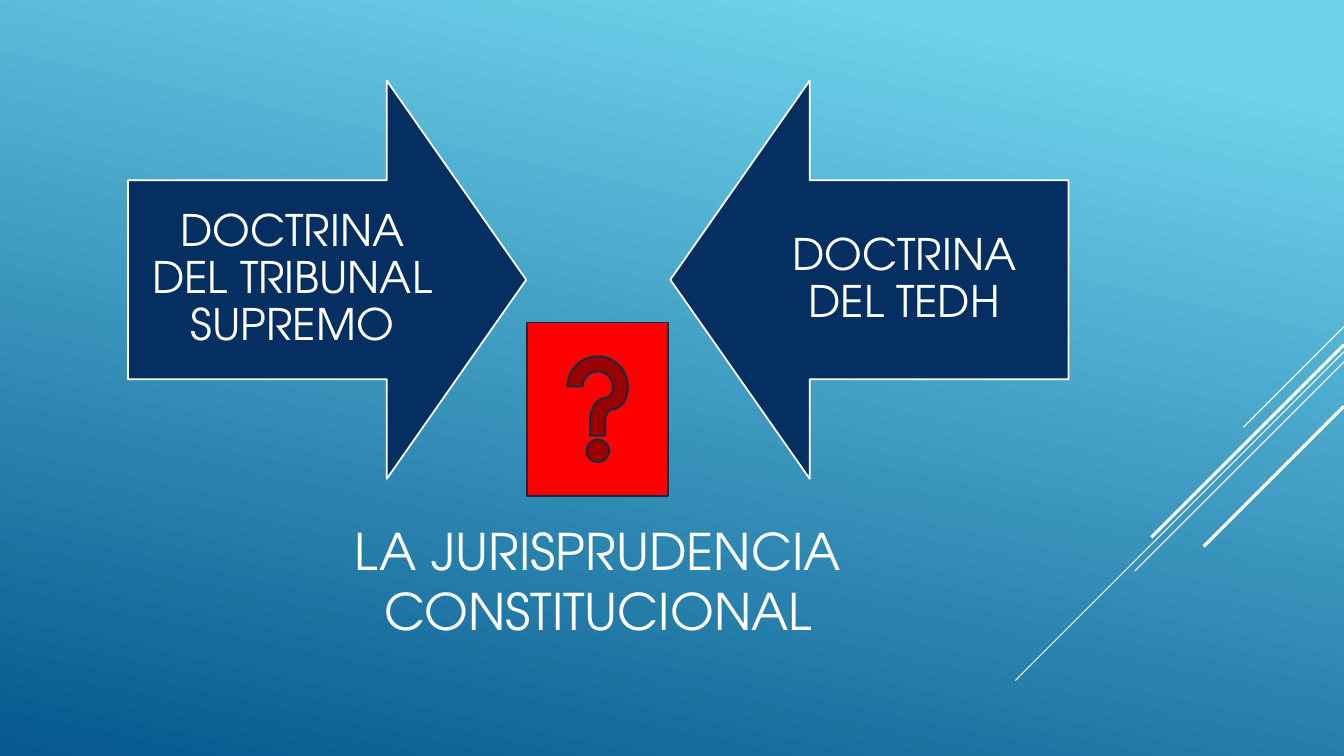
from dataclasses import dataclass
from typing import Any

import lxml.etree
import pptx
import pptx.dml.color
import pptx.enum.shapes
import pptx.enum.text
import pptx.oxml.ns
import pptx.util

SHAPES = pptx.enum.shapes.MSO_SHAPE
COLUMNS, ROWS = 160, 90
CELL = pptx.util.Inches(1 / 12)


@dataclass(frozen=True)
class Theme:
    font: str = "TeX Gyre Adventor"
    white: str = "FFFFFF"
    navy: str = "052F61"
    red: str = "FF0000"
    button_edge: str = "043148"
    sky: str = "6ED2EB"
    deep_blue: str = "06588E"
    title_size: float = 36
    doctrine_size: float = 31
    outline: float = 1.25
    thin_ray: float = 0.75
    thick_ray: float = 2.25


@dataclass(frozen=True)
class Box:
    left: float
    top: float
    width: float
    height: float

    def lengths(self) -> list[int]:
        return [cells(n) for n in (self.left, self.top, self.width, self.height)]


@dataclass(frozen=True)
class Ray:
    """A diagonal from the right edge: its starting row and its run in cells."""
    row: float
    run: float
    weight: float


@dataclass(frozen=True)
class Doctrine:
    text: str
    arrow_left: float
    text_left: float
    rotation: float


THEME = Theme()

LEFT, RIGHT = 15.24, 127.2
ARROW_TOP, ARROW_SIDE = 9.6, 47.4
SHAFT_SHARE, HEAD_SHARE = 0.5, 0.35
TEXT_WIDTH = ARROW_SIDE * (1 - HEAD_SHARE / 2)
TEXT_HEIGHT = ARROW_SIDE * SHAFT_SHARE
TEXT_INSET = 2.88

RAYS = [
    Ray(38.88, 12, THEME.thin_ray),
    Ray(41.88, 39.12, THEME.thin_ray),
    Ray(43.08, 24.9, THEME.thin_ray),
    Ray(41.04, 22.92, THEME.thick_ray),
    Ray(48.36, 16.7, THEME.thick_ray),
]
DOCTRINES = [
    Doctrine("DOCTRINA DEL TRIBUNAL SUPREMO", LEFT, LEFT, 270),
    Doctrine("DOCTRINA DEL TEDH", RIGHT - ARROW_SIDE, RIGHT - TEXT_WIDTH, 90),
]
TITLE = Box(LEFT, 59.16, RIGHT - LEFT, 19.8)
QUESTION = Box(62.76, 38.4, 16.8, 20.64)


def cells(count: float) -> int:
    return round(count * CELL)


def rgb(code: str) -> Any:
    return pptx.dml.color.RGBColor.from_string(code)


def apply(target: Any, values: dict[str, Any]) -> None:
    for name, value in values.items():
        setattr(target, name, value)


def paint_background(slide: Any) -> None:
    fill = slide.background.fill
    fill.gradient()
    fill.gradient_angle = 360 - 102
    stops = [(0.1, THEME.sky), (1, THEME.deep_blue)]
    for stop, (position, color) in zip(fill.gradient_stops, stops):
        stop.position = position
        stop.color.rgb = rgb(color)


def draw_ray(slide: Any, ray: Ray) -> None:
    line = slide.shapes.add_connector(
        pptx.enum.shapes.MSO_CONNECTOR.STRAIGHT,
        cells(COLUMNS), cells(ray.row),
        cells(COLUMNS - ray.run), cells(ray.row + ray.run),
    )
    line.line.color.rgb = rgb(THEME.white)
    line.line.width = pptx.util.Pt(ray.weight)
    lxml.etree.SubElement(line.element.spPr, pptx.oxml.ns.qn("a:effectLst"))


def draw_shape(slide: Any, kind: Any, box: Box, fill: str, edge: str) -> Any:
    shape = slide.shapes.add_shape(kind, *box.lengths())
    shape.shadow.inherit = False
    shape.fill.solid()
    shape.fill.fore_color.rgb = rgb(fill)
    shape.line.color.rgb = rgb(edge)
    shape.line.width = pptx.util.Pt(THEME.outline)
    return shape


def write(slide: Any, text: str, box: Box, size: float,
          frame_format: dict[str, Any], spacing: float) -> None:
    frame = slide.shapes.add_textbox(*box.lengths()).text_frame
    middle = pptx.enum.text.MSO_ANCHOR.MIDDLE
    apply(frame, {"word_wrap": True, "vertical_anchor": middle, **frame_format})
    paragraph = frame.paragraphs[0]
    apply(paragraph, {"alignment": pptx.enum.text.PP_ALIGN.CENTER,
                      "line_spacing": spacing})
    run = paragraph.add_run()
    run.text = text
    apply(run.font, {"name": THEME.font, "size": pptx.util.Pt(size)})
    run.font.color.rgb = rgb(THEME.white)


def draw_doctrine(slide: Any, doctrine: Doctrine) -> None:
    arrow = draw_shape(
        slide, SHAPES.DOWN_ARROW,
        Box(doctrine.arrow_left, ARROW_TOP, ARROW_SIDE, ARROW_SIDE),
        THEME.navy, THEME.white,
    )
    arrow.rotation = doctrine.rotation
    arrow.adjustments[0] = SHAFT_SHARE
    arrow.adjustments[1] = HEAD_SHARE
    text_top = ARROW_TOP + (ARROW_SIDE - TEXT_HEIGHT) / 2
    margins = {f"margin_{side}": cells(TEXT_INSET)
               for side in ("left", "top", "right", "bottom")}
    write(slide, doctrine.text,
          Box(doctrine.text_left, text_top, TEXT_WIDTH, TEXT_HEIGHT),
          THEME.doctrine_size, margins, 0.9)


def main() -> None:
    deck = pptx.Presentation()
    apply(deck, {"slide_width": cells(COLUMNS), "slide_height": cells(ROWS)})
    slide = deck.slides.add_slide(deck.slide_layouts[6])
    paint_background(slide)
    for ray in RAYS:
        draw_ray(slide, ray)
    write(slide, "LA JURISPRUDENCIA CONSTITUCIONAL", TITLE, THEME.title_size, {}, 1)
    for doctrine in DOCTRINES:
        draw_doctrine(slide, doctrine)
    draw_shape(slide, SHAPES.ACTION_BUTTON_HELP, QUESTION,
               THEME.red, THEME.button_edge)
    deck.save("out.pptx")


if __name__ == "__main__":
    main()
